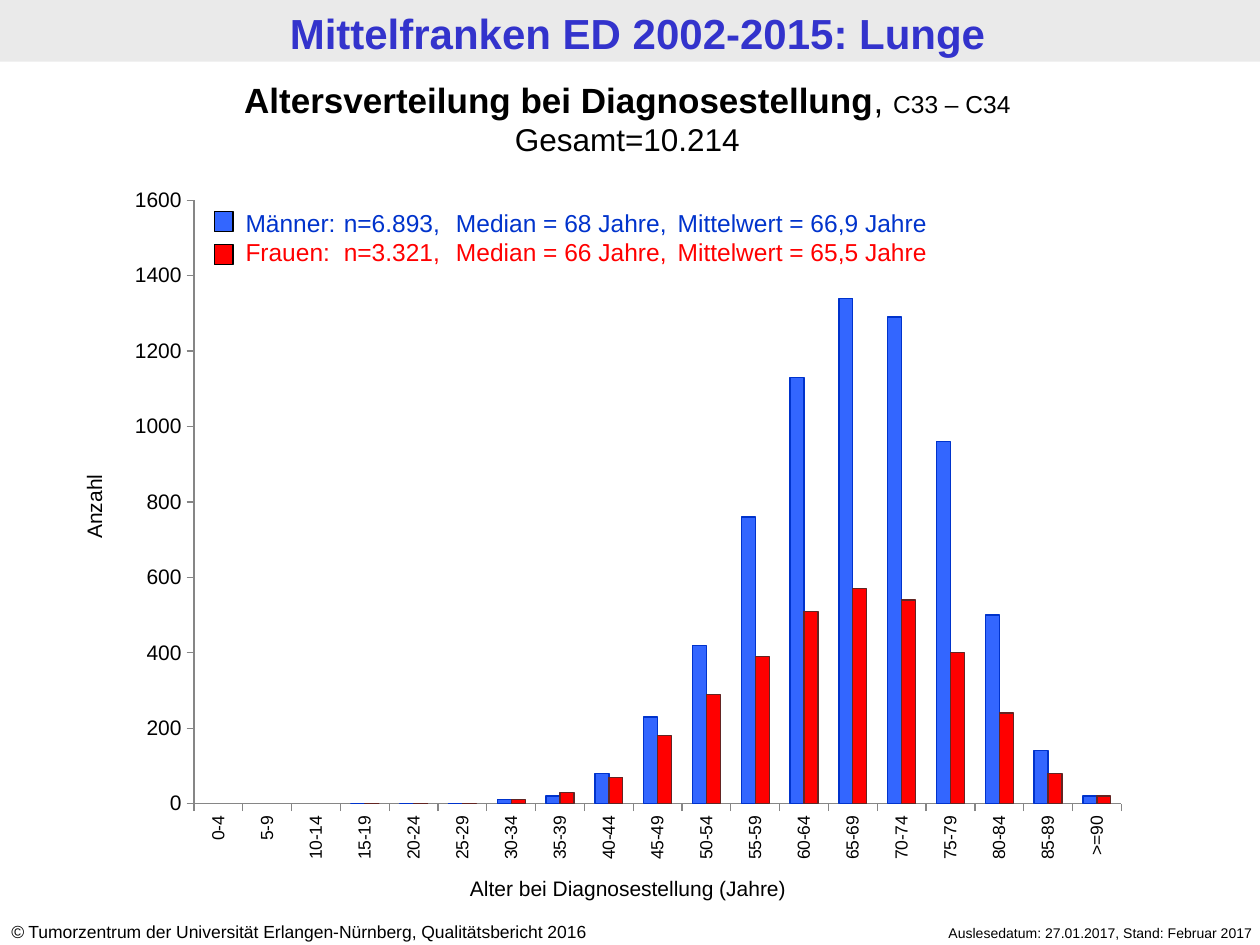
import pptx
import pptx.chart.data
import pptx.dml.color
import pptx.enum.chart
import pptx.enum.shapes
import pptx.enum.text
import pptx.oxml
import pptx.oxml.ns
import pptx.util
from pptx.util import Inches

COLORS = {
    "band": "EAEAEA", "heading": "3333CC", "text": "000000", "axis": "868686",
    "men": "3366FF", "men_dark": "0033CC", "women": "FF0000",
    "women_dark": "632523", "white": "FFFFFF",
}
ALIGN = {
    "left": pptx.enum.text.PP_ALIGN.LEFT,
    "center": pptx.enum.text.PP_ALIGN.CENTER,
    "right": pptx.enum.text.PP_ALIGN.RIGHT,
}


def rgb(name):
    return pptx.dml.color.RGBColor.from_string(COLORS[name])


class SlideBuilder:
    font_name = "Arial"

    def __init__(self, slide):
        self.slide = slide

    def style_font(self, font, size, color="text", bold=False, italic=False):
        font.name = self.font_name
        font.size = pptx.util.Pt(size)
        font.bold = bold
        font.italic = italic
        font.color.rgb = rgb(color)

    def rectangle(self, box, fill, outline=None):
        shape = self.slide.shapes.add_shape(
            pptx.enum.shapes.MSO_SHAPE.RECTANGLE, *map(Inches, box))
        shape.shadow.inherit = False
        shape.fill.solid()
        shape.fill.fore_color.rgb = rgb(fill)
        if outline:
            shape.line.color.rgb = rgb(outline)
            shape.line.width = pptx.util.Pt(0.75)
        else:
            shape.line.fill.background()

    def text(self, box, paragraphs, align="left", tabs=(), rotation=0):
        """Each paragraph is a list of (text, font options) runs; tabs are in inches."""
        textbox = self.slide.shapes.add_textbox(*map(Inches, box))
        textbox.rotation = rotation
        frame = textbox.text_frame
        frame.word_wrap = True
        for index, runs in enumerate(paragraphs):
            paragraph = frame.add_paragraph() if index else frame.paragraphs[0]
            paragraph.alignment = ALIGN[align]
            if tabs:
                self.tab_stops(paragraph, tabs)
            for words, options in runs:
                run = paragraph.add_run()
                run.text = words
                self.style_font(run.font, **options)

    def tab_stops(self, paragraph, positions):
        properties = paragraph._p.get_or_add_pPr()
        tab_list = pptx.oxml.parse_xml(
            f'<a:tabLst {pptx.oxml.ns.nsdecls("a")}/>')
        for position in positions:
            tab_list.append(pptx.oxml.parse_xml(
                f'<a:tab {pptx.oxml.ns.nsdecls("a")} pos="{Inches(position)}" algn="l"/>'))
        properties.append(tab_list)

    def column_chart(self, box, categories, series):
        """Each series is (name, values, fill colour, outline colour)."""
        data = pptx.chart.data.CategoryChartData()
        data.categories = categories
        for name, values, _, _ in series:
            data.add_series(name, values)
        chart = self.slide.shapes.add_chart(
            pptx.enum.chart.XL_CHART_TYPE.COLUMN_CLUSTERED,
            *map(Inches, box), data).chart
        chart.has_legend = False
        chart.has_title = False
        self.style_font(chart.font, 12)
        plot = chart.plots[0]
        plot.gap_width = 150
        plot.overlap = 0
        plot.vary_by_categories = False
        for bars, (_, _, fill, outline) in zip(plot.series, series):
            bars.format.fill.solid()
            bars.format.fill.fore_color.rgb = rgb(fill)
            bars.format.line.color.rgb = rgb(outline)
            bars.format.line.width = pptx.util.Pt(0.75)
        for axis, size in ((chart.category_axis, 10), (chart.value_axis, 12)):
            axis.has_major_gridlines = False
            axis.major_tick_mark = pptx.enum.chart.XL_TICK_MARK.OUTSIDE
            axis.minor_tick_mark = pptx.enum.chart.XL_TICK_MARK.NONE
            axis.format.line.color.rgb = rgb("axis")
            self.style_font(axis.tick_labels.font, size)
        chart.value_axis.minimum_scale = 0
        chart.value_axis.maximum_scale = 1600
        chart.value_axis.major_unit = 200
        labels = chart.category_axis._element.find(pptx.oxml.ns.qn("c:txPr"))
        body = labels.find(pptx.oxml.ns.qn("a:bodyPr"))
        body.set("rot", "-5400000")
        body.set("vert", "horz")
        self.place_plot(chart, box, (1.54, 1.59, 7.36, 4.79))

    def place_plot(self, chart, box, plot_box):
        """Fix the inner plot area, given in slide inches, within the chart."""
        left, top, width, height = box
        x, y, w, h = plot_box
        shares = {"x": (x - left) / width, "y": (y - top) / height,
                  "w": w / width, "h": h / height}
        values = "".join(f'<c:{key} val="{share:.4f}"/>' for key, share in shares.items())
        layout = pptx.oxml.parse_xml(
            f'<c:layout {pptx.oxml.ns.nsdecls("c")}><c:manualLayout>'
            '<c:layoutTarget val="inner"/><c:xMode val="edge"/><c:yMode val="edge"/>'
            f'{values}</c:manualLayout></c:layout>')
        plot_area = chart._chartSpace.chart.plotArea
        for old_layout in plot_area.findall(pptx.oxml.ns.qn("c:layout")):
            plot_area.remove(old_layout)
        plot_area.insert(0, layout)


def main():
    presentation = pptx.Presentation()
    presentation.slide_width = Inches(10)
    presentation.slide_height = Inches(7.5)
    builder = SlideBuilder(presentation.slides.add_slide(presentation.slide_layouts[6]))

    builder.rectangle((0, 0, 10, 0.49), "band")
    builder.text((0.06, 0.01, 10, 0.49), [[
        ("Mittelfranken ED 2002-2015: Lunge",
         {"size": 24, "color": "heading", "bold": True})]], "center")
    builder.text((-0.01, 7.26, 5.24, 0.27), [[
        ("©", {"size": 10, "italic": True}),
        (" Tumorzentrum der Universität Erlangen-Nürnberg, Qualitätsbericht 2016",
         {"size": 10})]])
    builder.text((6.65, 7.29, 3.39, 0.24), [[
        ("Auslesedatum: 27.01.2017, Stand: Februar 2017", {"size": 8})]], "right")

    age_groups = [f"{age}-{age + 4}" for age in range(0, 90, 5)] + [">=90"]
    men = [None, None, None, 0, 0, 0, 10, 20, 80, 230, 420, 760, 1130, 1340,
           1290, 960, 500, 140, 20]
    women = [None, None, None, 0, 0, 0, 10, 30, 70, 180, 290, 390, 510, 570,
             540, 400, 240, 80, 20]
    builder.column_chart((0.91, 1.39, 8.16, 5.55), age_groups, [
        ("Männer", men, "men", "men_dark"),
        ("Frauen", women, "women", "women_dark")])

    builder.text((-0.04, 0.57, 10.04, 0.74), [
        [("Altersverteilung bei Diagnosestellung", {"size": 20, "bold": True}),
         (", ", {"size": 20}),
         ("C33 – C34", {"size": 14})],
        [("Gesamt=10.214", {"size": 18})]], "center")
    builder.text((1.85, 1.6, 6.85, 0.57), [
        [("Männer: \tn=6.893, \tMedian = 68 Jahre, \tMittelwert = 66,9 Jahre",
          {"size": 14, "color": "men_dark"})],
        [("Frauen: \tn=3.321, \tMedian = 66 Jahre,\tMittelwert = 65,5 Jahre",
          {"size": 14, "color": "women"})]], tabs=(0.78, 1.67, 3.43))
    for top, key_color in ((1.68, "men"), (1.94, "women")):
        builder.rectangle((1.7, top, 0.15, 0.16), key_color, "text")

    builder.text((3.45, 6.9, 3.07, 0.3), [[
        ("Alter bei Diagnosestellung (Jahre)", {"size": 12})]], "center")
    builder.text((-0.56, 3.87, 2.61, 0.3), [[("Anzahl", {"size": 12})]],
                 "center", rotation=270)

    presentation.save("out.pptx")


if __name__ == "__main__":
    main()
